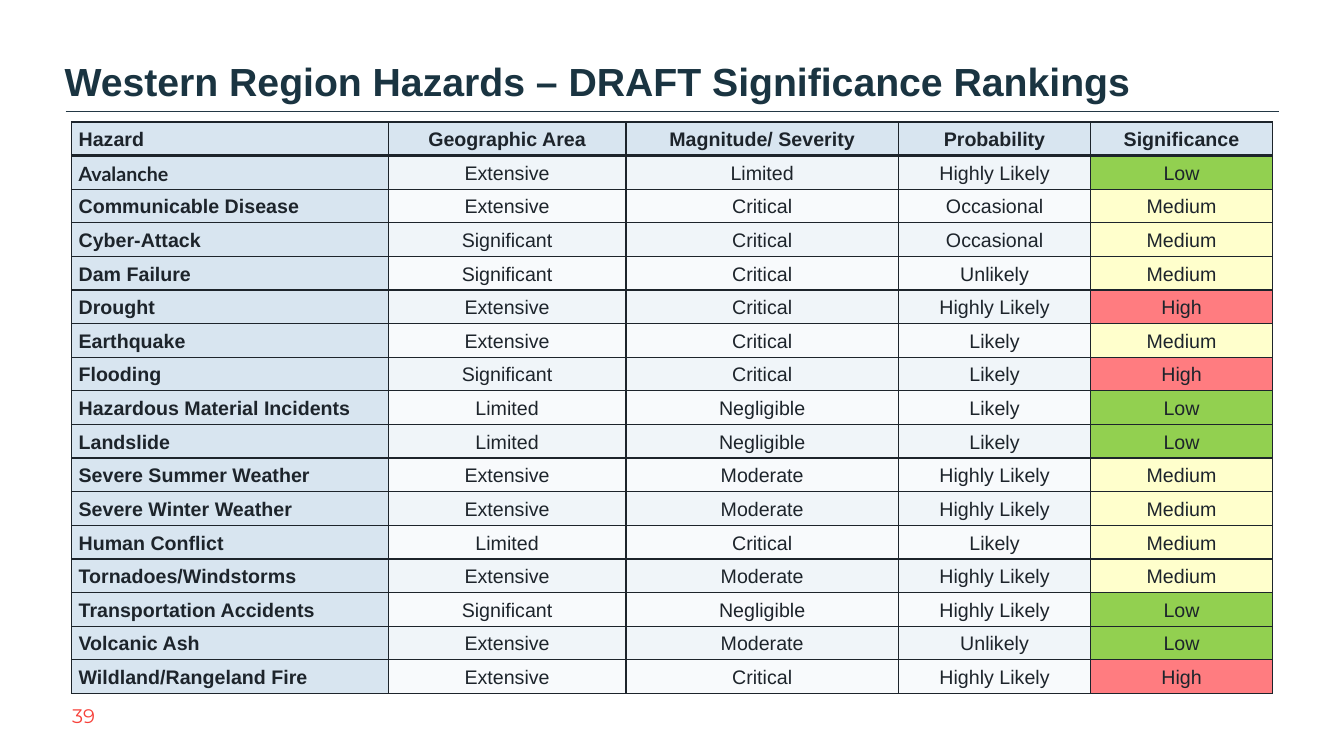
from dataclasses import dataclass
from lxml import etree
from pptx import Presentation
from pptx.dml.color import RGBColor
from pptx.enum.shapes import MSO_CONNECTOR
from pptx.enum.text import MSO_ANCHOR, MSO_AUTO_SIZE, PP_ALIGN
from pptx.oxml.ns import qn
from pptx.util import Inches, Pt

STRAIGHT = MSO_CONNECTOR.STRAIGHT
LEFT, CENTER = PP_ALIGN.LEFT, PP_ALIGN.CENTER
MIDDLE, BOTTOM = MSO_ANCHOR.MIDDLE, MSO_ANCHOR.BOTTOM
NO_AUTOFIT = MSO_AUTO_SIZE.NONE


@dataclass(frozen=True)
class Theme:
    title: str = "1A3441"
    rule: str = "233845"
    ink: str = "1D242B"
    number: str = "F7413A"
    label_fill: str = "D8E5F0"
    bands: tuple = ("F0F5F9", "F8FAFC")
    title_size: int = 28
    text_size: int = 14
    font: str = "Arial"
    accent_font: str = "Lato"
    number_font: str = "Montserrat"


THEME = Theme()
RANK_FILLS = {"Low": "92D050", "Medium": "FFFFCC", "High": "FF7C80"}


def add_text(paragraph, text, font, size, color, bold=False):
    run = paragraph.add_run()
    run.text = text
    run.font.name = font
    run.font.size = Pt(size)
    run.font.bold = bold
    run.font.color.rgb = RGBColor.from_string(color)


def add_border(cell, side, points):
    line = etree.SubElement(cell._tc.get_or_add_tcPr(), qn("a:" + side), w=str(Pt(points)))
    solid = etree.SubElement(line, qn("a:solidFill"))
    etree.SubElement(solid, qn("a:srgbClr"), val=THEME.ink)


prs = Presentation()
prs.slide_width, prs.slide_height = Inches(13.33), Inches(7.5)
slide = prs.slides.add_slide(prs.slide_layouts[5])

title = slide.shapes.title
title.left, title.top = Inches(0.64), Inches(0.28)
title.width, title.height = Inches(10.77), Inches(0.76)
title_frame = title.text_frame
title_frame.auto_size = NO_AUTOFIT
title_frame.word_wrap = True
title_frame.vertical_anchor = BOTTOM
title_frame.margin_left = title_frame.margin_right = 0
title_frame.margin_top = title_frame.margin_bottom = 0
heading = title_frame.paragraphs[0]
heading.alignment = LEFT
heading.line_spacing = 1.2
add_text(heading, "Western Region Hazards – DRAFT Significance Rankings",
         THEME.font, THEME.title_size, THEME.title, True)

title_rule = slide.shapes.add_connector(
    STRAIGHT, Inches(0.65), Inches(1.1), Inches(12.69), Inches(1.1))
title_rule.line.color.rgb = RGBColor.from_string(THEME.rule)
title_rule.line.width = Pt(0.5)
etree.SubElement(title_rule._element.spPr, qn("a:effectLst"))

page_number = slide.shapes.add_textbox(Inches(0), Inches(6.9), Inches(1.66), Inches(0.4))
page_number.text_frame.word_wrap = True
page_number.text_frame.vertical_anchor = MIDDLE
number_line = page_number.text_frame.paragraphs[0]
number_line.alignment = CENTER
add_text(number_line, "39", THEME.number_font, THEME.text_size, THEME.number)

HAZARDS = [
    ("Hazard", "Geographic Area", "Magnitude/ Severity", "Probability", "Significance"),
    ("Avalanche", "Extensive", "Limited", "Highly Likely", "Low"),
    ("Communicable Disease", "Extensive", "Critical", "Occasional", "Medium"),
    ("Cyber-Attack", "Significant", "Critical", "Occasional", "Medium"),
    ("Dam Failure", "Significant", "Critical", "Unlikely", "Medium"),
    ("Drought", "Extensive", "Critical", "Highly Likely", "High"),
    ("Earthquake", "Extensive", "Critical", "Likely", "Medium"),
    ("Flooding", "Significant", "Critical", "Likely", "High"),
    ("Hazardous Material Incidents", "Limited", "Negligible", "Likely", "Low"),
    ("Landslide", "Limited", "Negligible", "Likely", "Low"),
    ("Severe Summer Weather", "Extensive", "Moderate", "Highly Likely", "Medium"),
    ("Severe Winter Weather", "Extensive", "Moderate", "Highly Likely", "Medium"),
    ("Human Conflict", "Limited", "Critical", "Likely", "Medium"),
    ("Tornadoes/Windstorms", "Extensive", "Moderate", "Highly Likely", "Medium"),
    ("Transportation Accidents", "Significant", "Negligible", "Highly Likely", "Low"),
    ("Volcanic Ash", "Extensive", "Moderate", "Unlikely", "Low"),
    ("Wildland/Rangeland Fire", "Extensive", "Critical", "Highly Likely", "High"),
]
COLUMN_WIDTHS = (3.14, 2.36, 2.7, 1.91, 1.8)

rankings = slide.shapes.add_table(
    len(HAZARDS), len(COLUMN_WIDTHS),
    Inches(0.71), Inches(1.21), Inches(sum(COLUMN_WIDTHS)), Inches(5.67)).table
rankings.horz_banding = False
for column, width in zip(rankings.columns, COLUMN_WIDTHS):
    column.width = Inches(width)

for row, hazard in enumerate(HAZARDS):
    for col, text in enumerate(hazard):
        cell = rankings.cell(row, col)
        is_label = row == 0 or col == 0
        cell.margin_left = cell.margin_right = Inches(0.07)
        cell.margin_top = cell.margin_bottom = 0
        cell.vertical_anchor = MIDDLE
        add_border(cell, "lnL", 1)
        add_border(cell, "lnR", 1)
        add_border(cell, "lnT", 3 if row == 1 else 1)
        add_border(cell, "lnB", 3 if row == 0 else 1)
        band = THEME.bands[(row - 1) % 2]
        fill = THEME.label_fill if is_label else RANK_FILLS.get(text, band)
        cell.fill.solid()
        cell.fill.fore_color.rgb = RGBColor.from_string(fill)
        entry = cell.text_frame.paragraphs[0]
        entry.alignment = LEFT if col == 0 else CENTER
        entry.line_spacing = 1.1
        entry.space_after = Pt(6)
        font = THEME.accent_font if text == "Avalanche" else THEME.font
        add_text(entry, text, font, THEME.text_size, THEME.ink, is_label)

prs.save("out.pptx")
